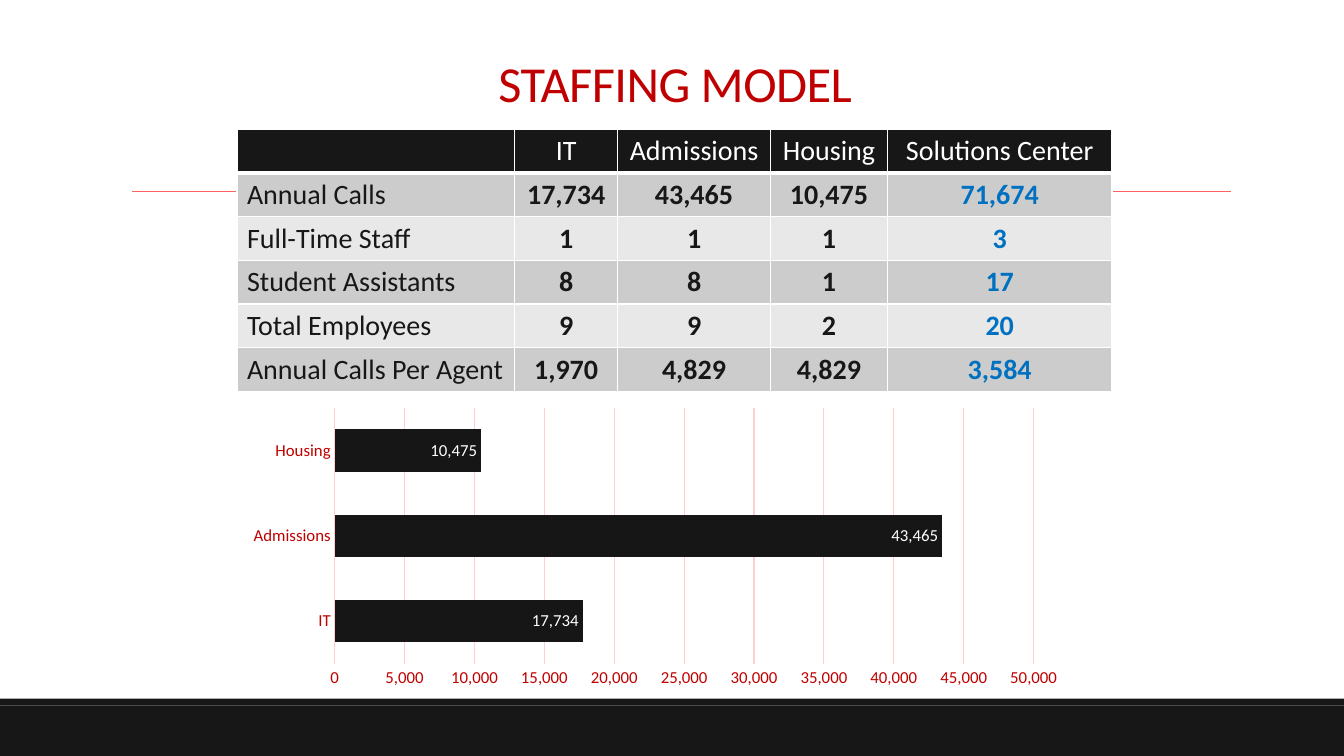
from lxml.etree import SubElement
from pptx import Presentation
from pptx.chart.data import CategoryChartData
from pptx.dml.color import RGBColor
from pptx.enum.chart import XL_CHART_TYPE, XL_LABEL_POSITION, XL_TICK_MARK
from pptx.enum.shapes import MSO_CONNECTOR, MSO_SHAPE
from pptx.enum.text import MSO_ANCHOR, PP_ALIGN
from pptx.oxml import parse_xml
from pptx.oxml.ns import nsdecls, qn
from pptx.util import Inches, Pt

FONT = "Calibri"
WHITE = RGBColor(0xFF, 0xFF, 0xFF)
INK = RGBColor(0x17, 0x17, 0x17)
BAR = RGBColor(0x16, 0x16, 0x16)
RED = RGBColor(0xC0, 0x00, 0x00)
BLUE = RGBColor(0x00, 0x70, 0xC0)
RULE = RGBColor(0xFF, 0x60, 0x60)
GRID = RGBColor(0xFF, 0xCF, 0xCF)
BANDS = (RGBColor(0xE8, 0xE8, 0xE8), RGBColor(0xCC, 0xCC, 0xCC))

WIDTH, HEIGHT = 13.33, 7.5
COLUMN_WIDTHS = (2.76, 1.02, 1.52, 1.16, 2.23)
STAFFING = (
    ("", "IT", "Admissions", "Housing", "Solutions Center"),
    ("Annual Calls", "17,734", "43,465", "10,475", "71,674"),
    ("Full-Time Staff", "1", "1", "1", "3"),
    ("Student Assistants", "8", "8", "1", "17"),
    ("Total Employees", "9", "9", "2", "20"),
    ("Annual Calls Per Agent", "1,970", "4,829", "4,829", "3,584"),
)
CALLS = {"IT": 17734, "Admissions": 43465, "Housing": 10475}


def style_font(font, size, color, bold=False):
    font.name = FONT
    font.size = Pt(size)
    font.bold = bold
    font.color.rgb = color


def add_footer(slide, left, top, width, height):
    """Dark band with a narrow strip, an eighth of its height, along the top."""
    strip = height / 8
    for offset, depth in ((strip, height - strip), (0, strip)):
        band = slide.shapes.add_shape(
            MSO_SHAPE.RECTANGLE, Inches(left), Inches(top + offset),
            Inches(width), Inches(depth))
        band.shadow.inherit = False
        band.fill.solid()
        band.fill.fore_color.rgb = INK
        band.line.fill.background()


def add_rule(slide, left, top, width):
    rule = slide.shapes.add_connector(
        MSO_CONNECTOR.STRAIGHT, Inches(left), Inches(top),
        Inches(left + width), Inches(top))
    rule.line.color.rgb = RULE
    rule.line.width = Pt(0.5)
    SubElement(rule._element.spPr, qn("a:effectLst"))


def add_title(slide, left, top, width, height):
    box = slide.shapes.add_textbox(
        Inches(left), Inches(top), Inches(width), Inches(height))
    frame = box.text_frame
    frame.word_wrap = True
    frame.vertical_anchor = MSO_ANCHOR.BOTTOM
    frame.text = "STAFFING MODEL"
    paragraph = frame.paragraphs[0]
    paragraph.alignment = PP_ALIGN.CENTER
    paragraph.line_spacing = 0.85
    run = paragraph.runs[0]
    style_font(run.font, 36, RED)
    run.font._element.set("spc", "-40")


def set_borders(cell, bottom):
    """White borders of one point, with the bottom width given in points."""
    widths = (("lnL", 1), ("lnR", 1), ("lnT", 1), ("lnB", bottom))
    properties = cell._tc.get_or_add_tcPr()
    for index, (side, points) in enumerate(widths):
        properties.insert(index, parse_xml(
            f'<a:{side} {nsdecls("a")} w="{Pt(points)}"><a:solidFill>'
            f'<a:srgbClr val="{WHITE}"/></a:solidFill></a:{side}>'))


def add_staffing_table(slide, left, top, width, height):
    table = slide.shapes.add_table(
        len(STAFFING), len(COLUMN_WIDTHS), Inches(left), Inches(top),
        Inches(width), Inches(height)).table
    for column, share in zip(table.columns, COLUMN_WIDTHS):
        column.width = Inches(width * share / sum(COLUMN_WIDTHS))
    last = len(COLUMN_WIDTHS) - 1
    for row, values in enumerate(STAFFING):
        for column, value in enumerate(values):
            cell = table.cell(row, column)
            header, label = row == 0, column == 0
            cell.text = value
            cell.vertical_anchor = MSO_ANCHOR.MIDDLE
            cell.fill.solid()
            cell.fill.fore_color.rgb = INK if header else BANDS[row % 2]
            set_borders(cell, 3 if header else 1)
            paragraph = cell.text_frame.paragraphs[0]
            paragraph.alignment = PP_ALIGN.LEFT if label else PP_ALIGN.CENTER
            color = WHITE if header else BLUE if column == last else INK
            style_font(paragraph.font, 20, color)
            for run in paragraph.runs:
                style_font(run.font, 20, color, not (header or label))


def add_calls_chart(slide, left, top, width, height):
    data = CategoryChartData(number_format="#,##0")
    data.categories = list(CALLS)
    data.add_series("Series 1", list(CALLS.values()))
    chart = slide.shapes.add_chart(
        XL_CHART_TYPE.BAR_CLUSTERED, Inches(left), Inches(top),
        Inches(width), Inches(height), data).chart
    chart.has_legend = False
    chart.has_title = False
    style_font(chart.font, 10, RED)

    categories, values = chart.category_axis, chart.value_axis
    for axis in (categories, values):
        axis.major_tick_mark = XL_TICK_MARK.NONE
        axis.minor_tick_mark = XL_TICK_MARK.NONE
        style_font(axis.tick_labels.font, 12, RED)
    values.minimum_scale, values.maximum_scale = 0, 50000
    values.major_unit = 5000
    values.tick_labels.number_format = "#,##0"
    values.tick_labels.number_format_is_linked = False
    values.format.line.fill.background()
    values.has_major_gridlines = True
    for line in (categories.format.line, values.major_gridlines.format.line):
        line.color.rgb = GRID
        line.width = Pt(0.75)

    plot = chart.plots[0]
    plot.gap_width = 100
    plot.vary_by_categories = False
    series = plot.series[0]
    series.format.fill.solid()
    series.format.fill.fore_color.rgb = BAR
    labels = series.data_labels
    labels.show_value = True
    labels.position = XL_LABEL_POSITION.INSIDE_END
    labels.number_format = "#,##0"
    labels.number_format_is_linked = False
    style_font(labels.font, 12, WHITE)


def main():
    presentation = Presentation()
    presentation.slide_width = Inches(WIDTH)
    presentation.slide_height = Inches(HEIGHT)
    slide = presentation.slides.add_slide(presentation.slide_layouts[6])
    slide.background.fill.solid()
    slide.background.fill.fore_color.rgb = WHITE
    add_footer(slide, 0, 6.93, WIDTH, HEIGHT - 6.93)
    add_rule(slide, 1.31, 1.9, 10.9)
    add_title(slide, 2.57, 0.29, 8.25, 0.88)
    add_staffing_table(slide, 2.35, 1.28, 8.68, 2.6)
    add_calls_chart(slide, 2.35, 3.99, 8.3, 2.89)
    presentation.save("out.pptx")


if __name__ == "__main__":
    main()
